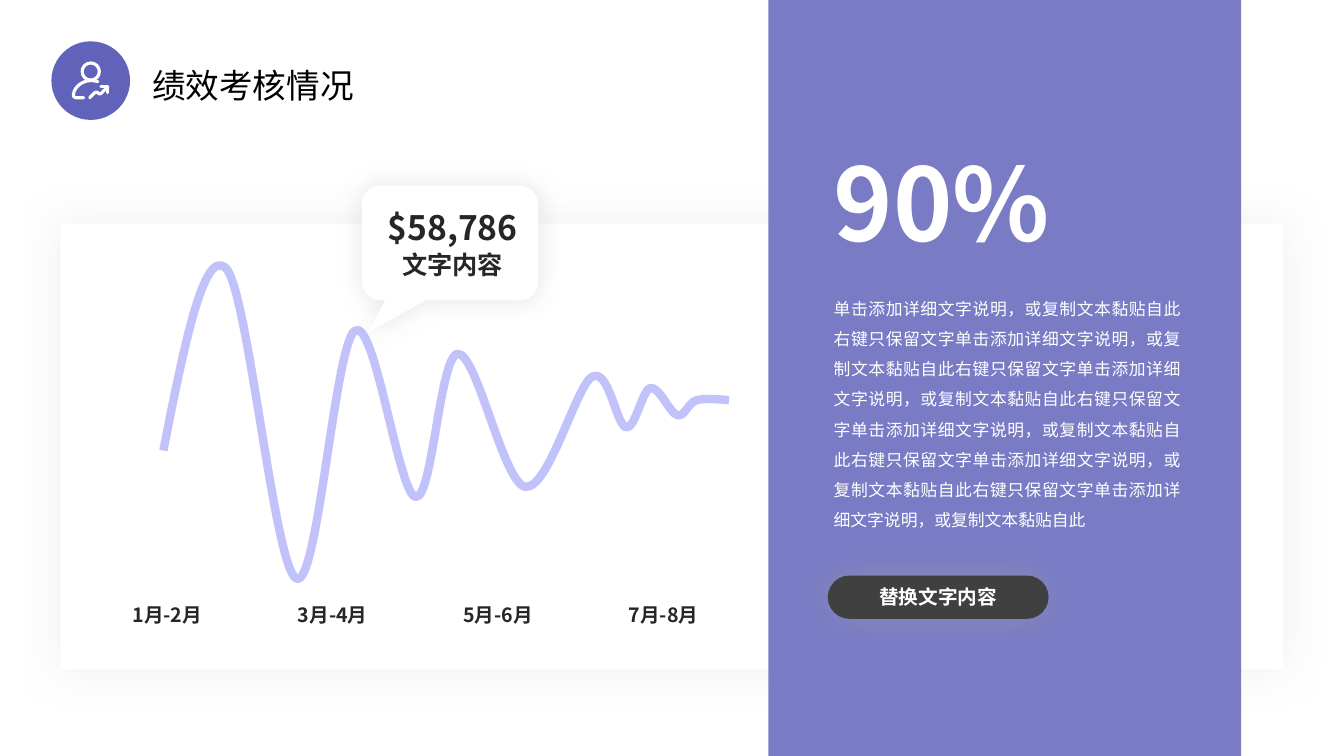
"""Builds the performance review slide with a wave, a callout and a summary panel."""
from itertools import chain

from lxml import etree
from pptx import Presentation
from pptx import util as u
from pptx.dml.color import RGBColor
from pptx.enum import shapes, text
from pptx.oxml.ns import qn

WHITE = RGBColor(0xFF, 0xFF, 0xFF)
BLACK = RGBColor(0x00, 0x00, 0x00)
INK = RGBColor(0x26, 0x26, 0x26)
BADGE = RGBColor(0x61, 0x63, 0xBB)
PANEL = RGBColor(0x79, 0x7B, 0xC5)
WAVE = RGBColor(0xC2, 0xC2, 0xFB)
BUTTON = RGBColor(0x40, 0x40, 0x40)
CARD_SHADOW = RGBColor(0xD9, 0xD9, 0xD9)
CALLOUT_SHADOW = RGBColor(0xBF, 0xBF, 0xBF)
BUTTON_SHADOW = RGBColor(0xA6, 0xA6, 0xA6)

KIND = shapes.MSO_SHAPE
ALIGN = text.PP_ALIGN


class Deck:
    """Holds the style and the current slide."""

    font = "Noto Sans CJK SC"

    def __init__(self):
        self.prs = Presentation()
        self.prs.slide_width = u.Inches(13.33)
        self.prs.slide_height = u.Inches(7.5)
        self.s = self.prs.slides.add_slide(self.prs.slide_layouts[6])

    def fill_text(self, tf, words, size, color, bold=False, **para):
        """Put one styled paragraph into a text frame."""
        tf.word_wrap = True
        p = tf.paragraphs[0]
        for name, value in para.items():
            setattr(p, name, value)
        r = p.add_run()
        r.text = words
        for name, value in {"name": self.font, "size": u.Pt(size), "bold": bold}.items():
            setattr(r.font, name, value)
        r.font.color.rgb = color
        etree.SubElement(r.font._element, qn("a:ea"), typeface=self.font)

    def label(self, box, words, size, color, **style):
        """Add a text box."""
        tf = self.s.shapes.add_textbox(*map(u.Inches, box)).text_frame
        tf.auto_size = text.MSO_AUTO_SIZE.SHAPE_TO_FIT_TEXT
        self.fill_text(tf, words, size, color, **style)

    def paint(self, sp, fill=None, line=None, shadow=None):
        """Set fill, line as (colour, points) and shadow as (colour, blur)."""
        sp.shadow.inherit = False
        if fill is None:
            sp.fill.background()
        else:
            sp.fill.solid()
            sp.fill.fore_color.rgb = fill
        if line:
            sp.line.color.rgb, sp.line.width = line[0], u.Pt(line[1])
        else:
            sp.line.fill.background()
        if shadow:
            effects = sp._element.spPr.find(qn("a:effectLst"))
            glow = etree.SubElement(effects, qn("a:outerShdw"), blurRad=str(u.Pt(shadow[1])),
                                    dist="0", dir="0", algn="ctr", rotWithShape="0")
            color = etree.SubElement(glow, qn("a:srgbClr"), val=str(shadow[0]))
            etree.SubElement(color, qn("a:alpha"), val="40000")
        return sp

    def shape(self, kind, box, **style):
        """Add a preset shape."""
        return self.paint(self.s.shapes.add_shape(kind, *map(u.Inches, box)), **style)

    def outline(self, contours, close=False, **style):
        """Add a freeform; a step of two numbers is a line, of six a curve."""
        builder = None
        for start, *steps in contours:
            x, y = map(u.Inches, start)
            if builder is None:
                builder = self.s.shapes.build_freeform(x, y)
            else:
                builder.move_to(x, y)
            flat = [u.Inches(n) for n in chain(*steps)]
            builder.add_line_segments(list(zip(flat[::2], flat[1::2])), close=close)
        sp = builder.convert_to_shape()
        lines = iter(list(sp._element.iter(qn("a:lnTo"))))
        for step in chain(*(c[1:] for c in contours)):
            group = [next(lines) for _ in range(len(step) // 2)]
            if len(group) == 3:
                curve = etree.Element(qn("a:cubicBezTo"))
                group[0].addprevious(curve)
                for ln in group:
                    curve.append(ln[0])
                    ln.getparent().remove(ln)
        return self.paint(sp, **style)


def draw_header(d):
    """Draw the badge with its person icon and the title."""
    d.label((1.41, 0.59, 2.5, 0.5), "绩效考核情况", 24, BLACK)
    d.shape(KIND.FLOWCHART_CONNECTOR, (0.51, 0.41, 0.78, 0.78), fill=BADGE)
    x, y, r, k = 0.9, 0.71, 0.085, 0.047
    head = [(x + r, y),
            (x + r, y + k, x + k, y + r, x, y + r),
            (x - k, y + r, x - r, y + k, x - r, y),
            (x - r, y - k, x - k, y - r, x, y - r),
            (x + k, y - r, x + r, y - k, x + r, y)]
    body = [(0.83, 0.97), (0.75, 0.97),
            (0.73, 0.97, 0.72, 0.95, 0.73, 0.93),
            (0.74, 0.86, 0.82, 0.8, 0.9, 0.8),
            (0.92, 0.8, 0.94, 0.8, 0.97, 0.81)]
    trend = [(0.89, 0.97), (0.94, 0.92), (0.95, 0.91, 0.96, 0.91, 0.97, 0.92),
             (0.98, 0.94, 0.99, 0.93, 1, 0.93), (1.07, 0.86)]
    tip = [(1, 0.86), (1.07, 0.86), (1.07, 0.92)]
    icon = d.outline([head, body, trend, tip], line=(WHITE, 2.25))
    icon._element.spPr.find(qn("a:ln")).set("cap", "rnd")


def draw_wave(d):
    """Draw the card, the wave and the month labels."""
    d.shape(KIND.RECTANGLE, (0.6, 2.22, 12.13, 4.42), fill=WHITE, shadow=(CARD_SHADOW, 30))
    wave = [(1.62, 4.47),
            (1.82, 3.46, 2.02, 2.45, 2.24, 2.66),
            (2.46, 2.87, 2.72, 5.64, 2.94, 5.74),
            (3.15, 5.85, 3.32, 3.42, 3.52, 3.28),
            (3.72, 3.15, 3.95, 4.89, 4.12, 4.93),
            (4.29, 4.97, 4.36, 3.53, 4.54, 3.51),
            (4.73, 3.5, 4.99, 4.79, 5.21, 4.83),
            (5.44, 4.86, 5.71, 3.84, 5.87, 3.74),
            (6.04, 3.64, 6.11, 4.22, 6.21, 4.24),
            (6.3, 4.26, 6.37, 3.87, 6.45, 3.85),
            (6.54, 3.83, 6.64, 4.1, 6.72, 4.12),
            (6.79, 4.14, 6.82, 4, 6.91, 3.97),
            (6.99, 3.95, 7.11, 3.96, 7.23, 3.97)]
    d.outline([wave], line=(WAVE, 6))
    for i, months in enumerate(("1月-2月", "3月-4月", "5月-6月", "7月-8月")):
        d.label((0.69 + 1.64 * i, 5.93, 1.94, 0.34), months, 14, INK,
                bold=True, alignment=ALIGN.CENTER)


def draw_callout(d):
    """Draw the speech bubble and its two lines."""
    bubble = [(3.78, 1.84), (5.15, 1.84), (5.25, 1.84, 5.34, 1.92, 5.34, 2.03),
              (5.34, 2.79), (5.34, 2.9, 5.25, 2.98, 5.15, 2.98),
              (4.22, 2.98), (3.65, 3.3), (3.82, 2.98),
              (3.78, 2.98), (3.67, 2.98, 3.59, 2.9, 3.59, 2.79),
              (3.59, 2.03), (3.59, 1.92, 3.67, 1.84, 3.78, 1.84)]
    d.outline([bubble], close=True, fill=WHITE, shadow=(CALLOUT_SHADOW, 17))
    for top, height, words, size in ((2, 0.5, "$58,786", 24), (2.42, 0.4, "文字内容", 18)):
        d.label((3.7, top, 1.58, height), words, size, INK, bold=True, alignment=ALIGN.CENTER)


def draw_panel(d):
    """Draw the summary panel with its figure, text and button."""
    d.shape(KIND.RECTANGLE, (7.62, 0, 4.69, 7.5), fill=PANEL)
    d.label((8.17, 1.35, 3.24, 1.31), "90%", 72, WHITE, bold=True)
    sentence = "单击添加详细文字说明，或复制文本黏贴自此"
    d.label((8.17, 2.81, 3.64, 2.52), (sentence + "右键只保留文字") * 5 + sentence, 12, WHITE,
            alignment=ALIGN.JUSTIFY, line_spacing=1.5)
    sp = d.shape(KIND.ROUNDED_RECTANGLE, (8.21, 5.71, 2.19, 0.43), fill=BUTTON,
                 shadow=(BUTTON_SHADOW, 30))
    sp.adjustments[0] = 0.5
    sp.text_frame.vertical_anchor = text.MSO_ANCHOR.MIDDLE
    d.fill_text(sp.text_frame, "替换文字内容", 14, WHITE, bold=True, alignment=ALIGN.CENTER)


def main():
    """Build and save the slide."""
    d = Deck()
    for draw in (draw_header, draw_wave, draw_callout, draw_panel):
        draw(d)
    d.prs.save("out.pptx")


if __name__ == "__main__":
    main()
